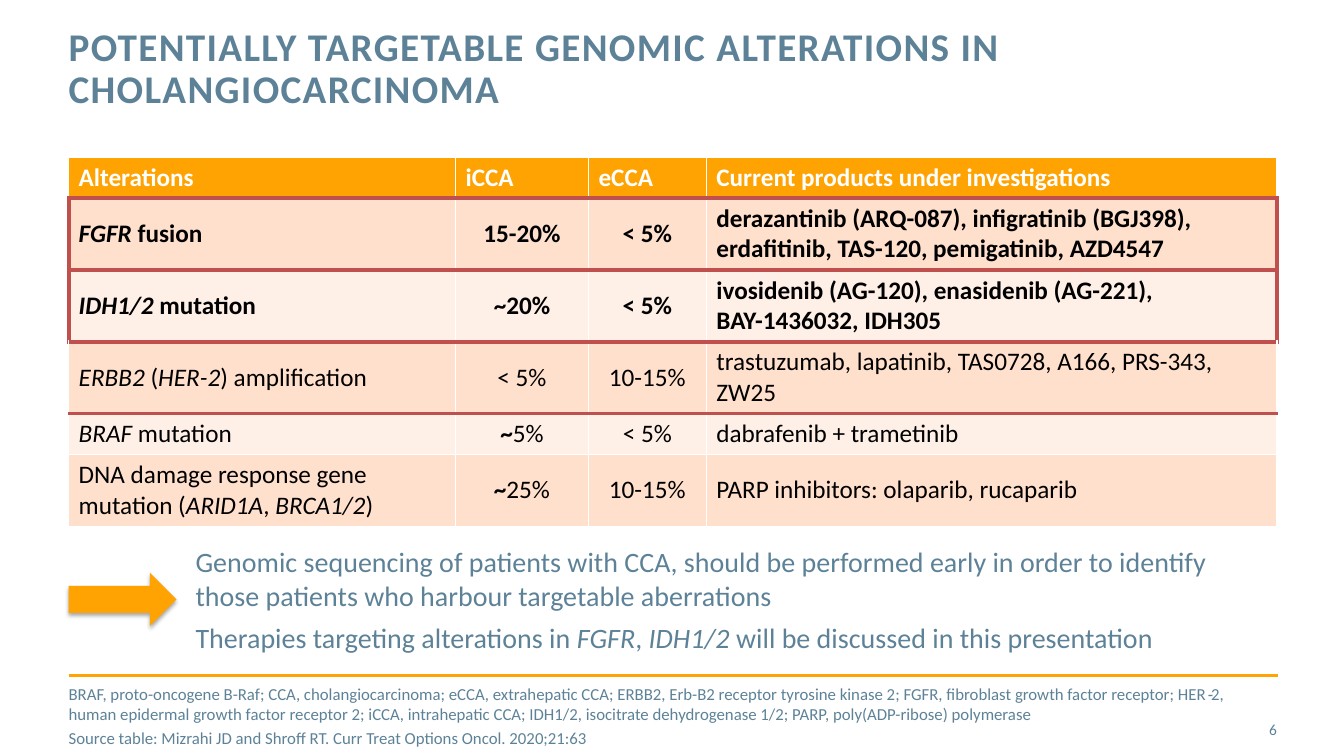
from dataclasses import dataclass

from lxml import etree
from pptx import Presentation
from pptx.dml.color import RGBColor
from pptx.enum.shapes import MSO_CONNECTOR, MSO_SHAPE
from pptx.enum.text import MSO_ANCHOR, PP_ALIGN
from pptx.oxml.ns import qn
from pptx.util import Cm, Pt

LEFT, CENTER, RIGHT = PP_ALIGN.LEFT, PP_ALIGN.CENTER, PP_ALIGN.RIGHT
TOP, MIDDLE = MSO_ANCHOR.TOP, MSO_ANCHOR.MIDDLE
STRAIGHT = MSO_CONNECTOR.STRAIGHT
RIGHT_ARROW = MSO_SHAPE.RIGHT_ARROW

FONT = "Calibri"
SLATE, ORANGE, RULE_ORANGE = "5D8298", "FEA302", "FFA402"
WHITE, BLACK, RED = "FFFFFF", "000000", "C0504D"
BANDS = ("FFE0CC", "FFF0E7")

MARGIN = 1.73
COLUMN_WIDTHS = (9.75, 3.35, 2.97, 14.38)
ONE_LINE, TWO_LINES = 1.03, 1.81
HIGHLIGHTED_ROWS = (1, 2)
RED_EDGES = (1, 2, 3, 4)


@dataclass(frozen=True)
class Span:
    text: str
    italic: bool = False
    bold: bool = False


@dataclass(frozen=True)
class Style:
    size: float
    color: str = SLATE
    bold: bool = False
    align: PP_ALIGN = LEFT
    space_before: float = 0
    line_height: float | None = None
    tracking: float = 0


@dataclass(frozen=True)
class TextBlock:
    left: float
    top: float
    width: float
    height: float
    paragraphs: tuple
    style: Style
    anchor: MSO_ANCHOR = TOP


@dataclass(frozen=True)
class Alteration:
    name: tuple
    intrahepatic: tuple
    extrahepatic: tuple
    products: tuple
    height: float


def plain(text: str) -> tuple:
    return (Span(text),)


def gene(text: str) -> Span:
    return Span(text, italic=True)


def about(text: str) -> tuple:
    return (Span("~", bold=True), Span(text))


TEXT_BLOCKS = (
    TextBlock(MARGIN, 0.69, 24.28, 2.24, (
        plain("POTENTIALLY TARGETABLE GENOMIC ALTERATIONS IN CHOLANGIOCARCINOMA"),
    ), Style(28, bold=True, line_height=30, tracking=1)),
    TextBlock(4.93, 13.72, 27.25, 2.79, (
        plain("Genomic sequencing of patients with CCA, should be performed early in order to identify \n"
              "those patients who harbour targetable aberrations"),
        (Span("Therapies targeting alterations in "), gene("FGFR"), Span(", "), gene("IDH1/2"),
         Span(" will be discussed in this presentation")),
    ), Style(20, space_before=6)),
    TextBlock(MARGIN, 17.53, 29.62, 1.02, (
        plain("BRAF, proto-oncogene B-Raf; CCA, cholangiocarcinoma; eCCA, extrahepatic CCA; "
              "ERBB2, Erb-B2 receptor tyrosine kinase 2; FGFR, fibroblast growth factor receptor; "
              "HER‑2, human epidermal growth factor receptor 2; iCCA, intrahepatic CCA; "
              "IDH1/2, isocitrate dehydrogenase 1/2; PARP, poly(ADP-ribose) polymerase"),
        plain("Source table: Mizrahi JD and Shroff RT. Curr Treat Options Oncol. 2020;21:63"),
    ), Style(12, space_before=3), MIDDLE),
    TextBlock(30, 17.86, 2.18, 1.02, (plain("6"),), Style(11, align=RIGHT), MIDDLE),
)

ALTERATIONS = (
    Alteration(plain("Alterations"), plain("iCCA"), plain("eCCA"),
               plain("Current products under investigations"), ONE_LINE),
    Alteration((gene("FGFR"), Span(" fusion")), plain("15-20%"), plain("< 5%"),
               plain("derazantinib (ARQ-087), infigratinib (BGJ398), "
                     "erdafitinib, TAS-120, pemigatinib, AZD4547"), TWO_LINES),
    Alteration((gene("IDH1/2"), Span(" mutation")), plain("~20%"), plain("< 5%"),
               plain("ivosidenib (AG-120), enasidenib (AG-221), \nBAY-1436032, IDH305"), TWO_LINES),
    Alteration((gene("ERBB2"), Span(" ("), gene("HER-2"), Span(") amplification")),
               plain("< 5%"), plain("10-15%"),
               plain("trastuzumab, lapatinib, TAS0728, A166, PRS-343, ZW25"), TWO_LINES),
    Alteration((gene("BRAF"), Span(" mutation")), about("5%"), plain("< 5%"),
               plain("dabrafenib + trametinib"), ONE_LINE),
    Alteration((Span("DNA damage response gene mutation ("), gene("ARID1A"), Span(", "),
                gene("BRCA1/2"), Span(")")), about("25%"), plain("10-15%"),
               plain("PARP inhibitors: olaparib, rucaparib"), TWO_LINES),
)


def rgb(color: str) -> RGBColor:
    return RGBColor.from_string(color)


def write_paragraph(paragraph, spans: tuple, style: Style) -> None:
    paragraph.alignment = style.align
    if style.line_height:
        paragraph.line_spacing = Pt(style.line_height)
    font = paragraph.font
    font.name, font.size, font.bold = FONT, Pt(style.size), style.bold
    font.color.rgb = rgb(style.color)
    for span in spans:
        for index, line in enumerate(span.text.split("\n")):
            if index:
                paragraph.add_line_break()
            run = paragraph.add_run()
            run.text = line
            if span.italic:
                run.font.italic = True
            if span.bold:
                run.font.bold = True
            if style.tracking:
                run._r.get_or_add_rPr().set("spc", str(round(style.tracking * 100)))


def add_text(page, block: TextBlock) -> None:
    box = page.shapes.add_textbox(Cm(block.left), Cm(block.top), Cm(block.width), Cm(block.height))
    frame = box.text_frame
    frame.word_wrap = True
    frame.vertical_anchor = block.anchor
    frame.margin_left = frame.margin_right = frame.margin_top = frame.margin_bottom = 0
    for index, spans in enumerate(block.paragraphs):
        paragraph = frame.add_paragraph() if index else frame.paragraphs[0]
        if index:
            paragraph.space_before = Pt(block.style.space_before)
        write_paragraph(paragraph, spans, block.style)


def add_border(cell, side: str, red: bool) -> None:
    width = Pt(3 if red else 1)
    line = etree.SubElement(cell._tc.get_or_add_tcPr(), qn(f"a:ln{side}"), w=str(width))
    fill = etree.SubElement(line, qn("a:solidFill"))
    etree.SubElement(fill, qn("a:srgbClr"), val=RED if red else WHITE)


def add_alterations_table(page) -> None:
    last = len(COLUMN_WIDTHS) - 1
    frame = page.shapes.add_table(
        len(ALTERATIONS), len(COLUMN_WIDTHS), Cm(MARGIN), Cm(3.96),
        Cm(sum(COLUMN_WIDTHS)), Cm(sum(item.height for item in ALTERATIONS)))
    table = frame.table
    table.first_row = table.horz_banding = False
    for column, width in zip(table.columns, COLUMN_WIDTHS):
        column.width = Cm(width)
    for row, item in enumerate(ALTERATIONS):
        table.rows[row].height = Cm(item.height)
        header, highlighted = row == 0, row in HIGHLIGHTED_ROWS
        contents = (item.name, item.intrahepatic, item.extrahepatic, item.products)
        for column, spans in enumerate(contents):
            cell = table.cell(row, column)
            cell.vertical_anchor = MIDDLE
            add_border(cell, "L", highlighted and column == 0)
            add_border(cell, "R", highlighted and column == last)
            add_border(cell, "T", row in RED_EDGES)
            add_border(cell, "B", row + 1 in RED_EDGES)
            cell.fill.solid()
            cell.fill.fore_color.rgb = rgb(ORANGE if header else BANDS[(row - 1) % 2])
            centered = not header and 0 < column < last
            style = Style(18, WHITE if header else BLACK, header or highlighted,
                          CENTER if centered else LEFT)
            write_paragraph(cell.text_frame.paragraphs[0], spans, style)


def add_footer_rule(page) -> None:
    rule = page.shapes.add_connector(STRAIGHT, Cm(MARGIN), Cm(17.02), Cm(32.21), Cm(17.02))
    rule.line.color.rgb = rgb(RULE_ORANGE)
    rule.line.width = Pt(2)
    etree.SubElement(rule._element.spPr, qn("a:effectLst"))


def add_arrow(page) -> None:
    arrow = page.shapes.add_shape(RIGHT_ARROW, Cm(MARGIN), Cm(14.43), Cm(2.72), Cm(1.35))
    arrow.fill.solid()
    arrow.fill.fore_color.rgb = rgb(ORANGE)
    arrow.line.fill.background()
    arrow.shadow.inherit = False
    effects = arrow._element.spPr.find(qn("a:effectLst"))
    shadow = etree.SubElement(effects, qn("a:outerShdw"), blurRad=str(Pt(3.1)),
                              dist=str(Pt(1.8)), dir="5400000", rotWithShape="0")
    color = etree.SubElement(shadow, qn("a:srgbClr"), val=BLACK)
    etree.SubElement(color, qn("a:alpha"), val="35000")


def main() -> None:
    deck = Presentation()
    deck.slide_width, deck.slide_height = Cm(33.87), Cm(19.05)
    page = deck.slides.add_slide(deck.slide_layouts[6])
    add_footer_rule(page)
    for block in TEXT_BLOCKS:
        add_text(page, block)
    add_alterations_table(page)
    add_arrow(page)
    deck.save("out.pptx")


if __name__ == "__main__":
    main()
